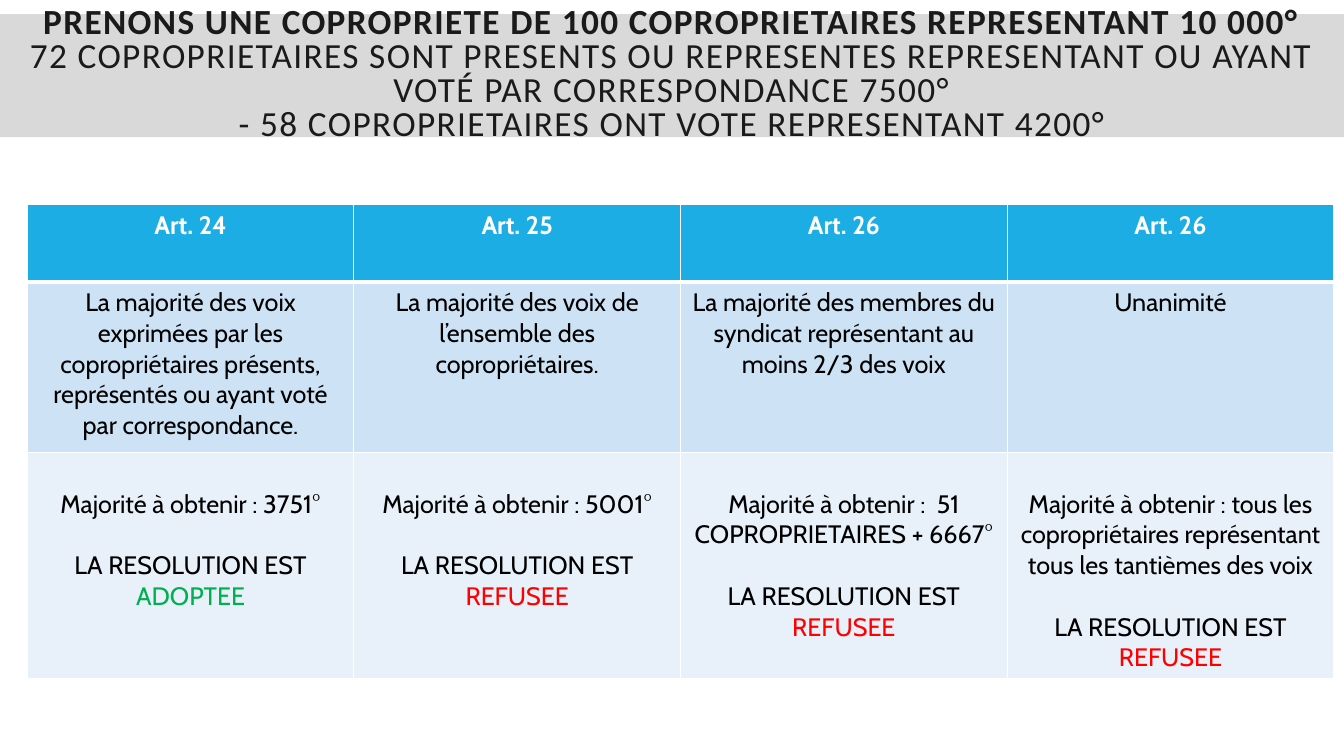
from copy import deepcopy

from lxml.etree import SubElement
from pptx import Presentation
from pptx.dml.color import RGBColor
from pptx.enum.text import MSO_ANCHOR, MSO_AUTO_SIZE, PP_ALIGN
from pptx.oxml.ns import qn
from pptx.util import Emu, Pt

PX = 9144
WHITE, BLACK, GREEN, RED = "FFFFFF", "000000", "00B050", "FF0000"
ROW_FILLS = ["1CADE4", "CDE3F5", "E8F1FA"]
ROW_HEIGHTS = [77, 169, 223]
COLUMN_WIDTH = 324
VERDICT = "LA RESOLUTION EST"
HEADLINE = [
    "PRENONS UNE COPROPRIETE DE 100 COPROPRIETAIRES REPRESENTANT 10 000°",
    "72 COPROPRIETAIRES SONT PRESENTS OU REPRESENTES REPRESENTANT OU AYANT VOTÉ PAR CORRESPONDANCE 7500°",
    "- 58 COPROPRIETAIRES ONT VOTE REPRESENTANT 4200°",
]
ARTICLES = [
    ("Art. 24",
     "La majorité des voix exprimées par les copropriétaires présents, représentés ou ayant voté par correspondance.",
     "Majorité à obtenir : 3751°", "ADOPTEE", GREEN),
    ("Art. 25",
     "La majorité des voix de l’ensemble des copropriétaires.",
     "Majorité à obtenir : 5001°", "REFUSEE", RED),
    ("Art. 26",
     "La majorité des membres du syndicat représentant au moins 2/3 des voix",
     "Majorité à obtenir :  51 COPROPRIETAIRES + 6667°", "REFUSEE", RED),
    ("Art. 26",
     "Unanimité",
     "Majorité à obtenir : tous les copropriétaires représentant tous les tantièmes des voix",
     "REFUSEE", RED),
]


def px(length):
    """Turn whole pixels into EMU."""
    return Emu(length * PX)


def rgb(code):
    """Turn a hex string into a colour."""
    return RGBColor.from_string(code)


def paint(filled, code):
    """Give a shape or cell a solid fill."""
    filled.fill.solid()
    filled.fill.fore_color.rgb = rgb(code)


def style_run(run, font, size, color, bold=False):
    """Format one run of text."""
    run.font.name = font
    run.font.size = Pt(size)
    run.font.color.rgb = rgb(color)
    run.font.bold = bold


def add_headline(slide):
    """Fill the title placeholder with the case being studied."""
    title = slide.shapes.title
    title.left, title.top, title.width, title.height = map(px, (0, 14, 1333, 122))
    paint(title, "D9D9D9")
    frame = title.text_frame
    frame.word_wrap = True
    frame.auto_size = MSO_AUTO_SIZE.NONE
    frame.vertical_anchor = MSO_ANCHOR.MIDDLE
    case = frame.paragraphs[0]
    case.text = "\v".join(HEADLINE)
    case.alignment = PP_ALIGN.CENTER
    case.line_spacing = 0.8
    for index, run in enumerate(case.runs):
        style_run(run, "Calibri", 25.2, "1A1A1A", bold=index == 0)
        run.font._element.set("spc", "100")
    for line_break in case._p.findall(qn("a:br")):
        line_break.append(deepcopy(case.runs[0].font._element))


def add_borders(cell, bottom):
    """Draw white borders, with a bottom line of the given points."""
    properties = cell._tc.get_or_add_tcPr()
    widths = {"a:lnL": 1, "a:lnR": 1, "a:lnT": 1, "a:lnB": bottom}
    for position, (side, width) in enumerate(widths.items()):
        line = SubElement(properties, qn(side), w=str(Pt(width)))
        properties.insert(position, line)
        SubElement(SubElement(line, qn("a:solidFill")), qn("a:srgbClr"), val=WHITE)


def fill_cell(cell, lines, fill, bold=False, bottom=1):
    """Write centred lines of (text, colour) into a cell."""
    paint(cell, fill)
    add_borders(cell, bottom)
    cell.text_frame.text = "\n".join(text for text, _ in lines)
    for paragraph, (_, color) in zip(cell.text_frame.paragraphs, lines):
        paragraph.alignment = PP_ALIGN.CENTER
        style_run(paragraph.runs[0], "Cabin", 18, color, bold)


def add_majorities(slide):
    """Add the table of majorities, one column per article."""
    frame = slide.shapes.add_table(
        len(ROW_HEIGHTS), len(ARTICLES), px(27), px(203),
        px(COLUMN_WIDTH * len(ARTICLES)), px(sum(ROW_HEIGHTS)))
    majorities = frame.table
    majorities.horz_banding = False
    for row, height in zip(majorities.rows, ROW_HEIGHTS):
        row.height = px(height)
    for column, (article, rule, threshold, outcome, color) in enumerate(ARTICLES):
        majorities.columns[column].width = px(COLUMN_WIDTH)
        heading, definition, result = (
            majorities.cell(row, column) for row in range(len(ROW_HEIGHTS)))
        fill_cell(heading, [(article, WHITE)], ROW_FILLS[0], bold=True, bottom=3)
        fill_cell(definition, [(rule, BLACK)], ROW_FILLS[1])
        fill_cell(result, [(threshold, BLACK), (VERDICT, BLACK), (outcome, color)],
                  ROW_FILLS[2])
        result.margin_top = px(36)
        result.text_frame.paragraphs[1].space_before = Pt(22)


def main():
    """Build and save the slide."""
    deck = Presentation()
    deck.slide_width, deck.slide_height = px(1333), px(750)
    slide = deck.slides.add_slide(deck.slide_layouts[5])
    add_majorities(slide)
    add_headline(slide)
    deck.save("out.pptx")


if __name__ == "__main__":
    main()
